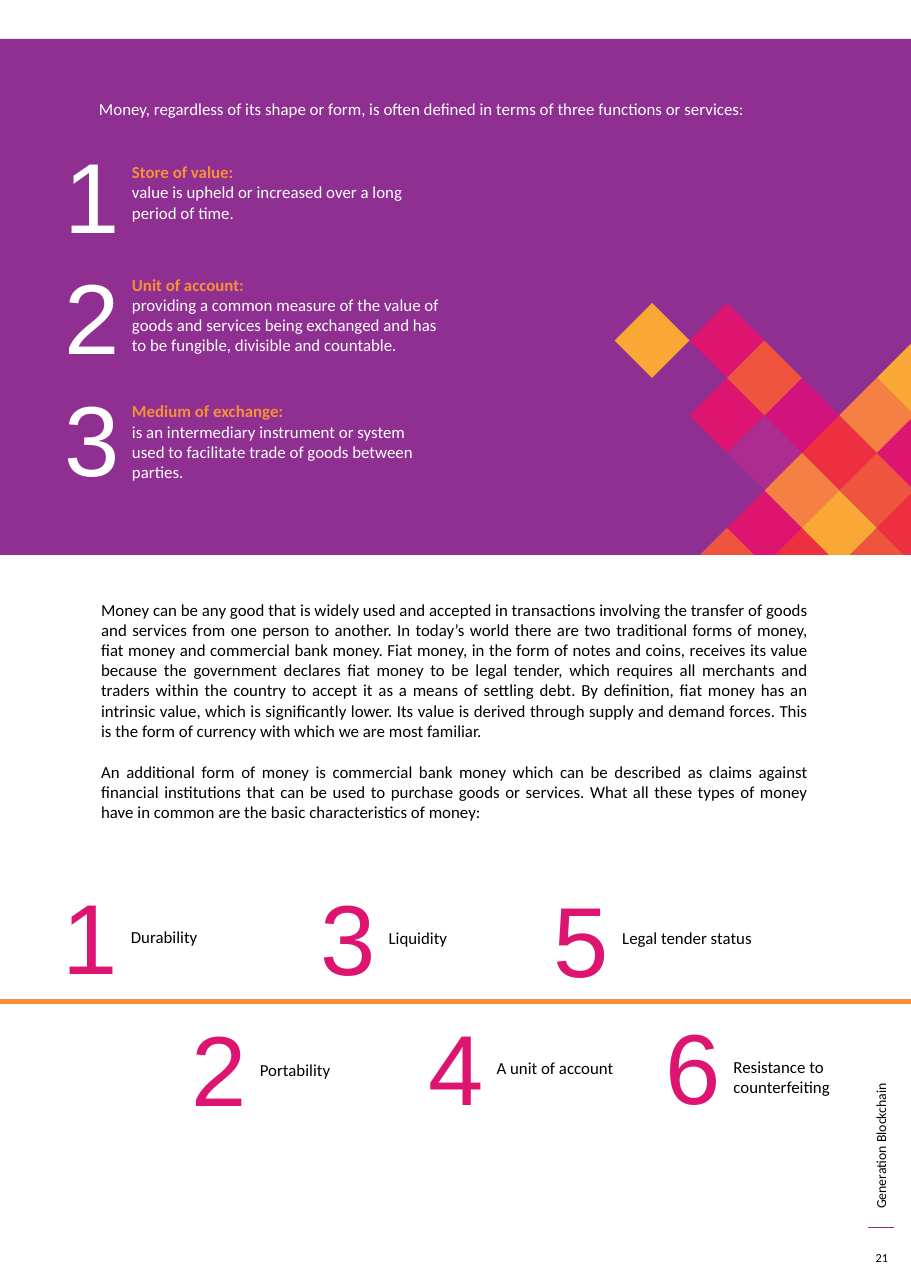
from lxml import etree
from pptx import Presentation
from pptx.dml.color import RGBColor
from pptx.enum.shapes import MSO_CONNECTOR, MSO_SHAPE
from pptx.enum.text import MSO_ANCHOR, PP_ALIGN
from pptx.oxml.ns import qn
from pptx.util import Pt

STRAIGHT = MSO_CONNECTOR.STRAIGHT
RECTANGLE = MSO_SHAPE.RECTANGLE
MIDDLE = MSO_ANCHOR.MIDDLE
LEFT, CENTER, JUSTIFY = PP_ALIGN.LEFT, PP_ALIGN.CENTER, PP_ALIGN.JUSTIFY

BLACK = RGBColor(0x00, 0x00, 0x00)
WHITE = RGBColor(0xFF, 0xFF, 0xFF)
PURPLE = RGBColor(0x8E, 0x2F, 0x91)
ORANGE = RGBColor(0xF7, 0x90, 0x37)
PINK = RGBColor(0xDD, 0x14, 0x70)
YELLOW = RGBColor(0xF9, 0xA8, 0x35)
APRICOT = RGBColor(0xF4, 0x80, 0x43)
CORAL = RGBColor(0xEF, 0x54, 0x3F)
RED = RGBColor(0xED, 0x2F, 0x40)
MAGENTA = RGBColor(0xD3, 0x13, 0x7D)
VIOLET = RGBColor(0xAC, 0x2C, 0x90)

PAGE_W, PAGE_H = 595.44, 841.68
PANEL_TOP, PANEL_BOTTOM = 25.4, 362.6

INTRO = ("Money, regardless of its shape or form, is often defined in terms of "
         "three functions or services:")
BODY = [
    "Money can be any good that is widely used and accepted in transactions "
    "involving the transfer of goods and services from one person to another. "
    "In today’s world there are two traditional forms of money, fiat money and "
    "commercial bank money. Fiat money, in the form of notes and coins, receives "
    "its value because the government declares fiat money to be legal tender, "
    "which requires all merchants and traders within the country to accept it as "
    "a means of settling debt. By definition, fiat money has an intrinsic value, "
    "which is significantly lower. Its value is derived through supply and demand "
    "forces. This is the form of currency with which we are most familiar.",
    "An additional form of money is commercial bank money which can be described "
    "as claims against financial institutions that can be used to purchase goods "
    "or services. What all these types of money have in common are the basic "
    "characteristics of money:",
]

# Label top, heading, explanation
FUNCTIONS = [
    (102.2, "Store of value:",
     "value is upheld or increased over a long period of time."),
    (175.7, "Unit of account:",
     "providing a common measure of the value of goods and services being "
     "exchanged and has to be fungible, divisible and countable."),
    (258.5, "Medium of exchange:",
     "is an intermediary instrument or system used to facilitate trade of goods "
     "between parties."),
]

# Digit left, digit top, label top, label width, label
CHARACTERISTICS = [
    (33.8, 568.1, 601.9, 82.8, "Durability"),
    (118.1, 654.5, 689, 82.8, "Portability"),
    (202.3, 568.8, 602.6, 82.8, "Liquidity"),
    (272.9, 653.8, 687.6, 103, "A unit of account"),
    (355, 570.2, 602.6, 118, "Legal tender status"),
    (427.7, 653, 686.9, 82.8, "Resistance to counterfeiting"),
]

# Column and row of each diamond's centre, in half diagonals
HALF = 24.48
FIRST_X, FIRST_Y = 426.24, 222.48
DIAMONDS = [
    (4, 6, RED), (3, 5, PINK), (2, 6, CORAL), (5, 5, YELLOW), (6, 4, CORAL),
    (5, 3, RED), (4, 4, APRICOT), (7, 3, PINK), (7, 1, YELLOW), (6, 2, APRICOT),
    (0, 0, YELLOW), (2, 0, PINK), (2, 2, PINK), (3, 3, VIOLET), (4, 2, MAGENTA),
    (3, 1, CORAL), (6, 6, CORAL), (7, 5, RED),
]


def add_text(s, box, lines, size=11, color=BLACK, font="Calibri", align=LEFT):
    sp = s.shapes.add_textbox(*map(Pt, box))
    tf = sp.text_frame
    tf.word_wrap = True
    tf.text = "\n".join(lines)
    for p in tf.paragraphs:
        p.alignment = align
        for r in p.runs:
            r.font.name = font
            r.font.size = Pt(size)
            r.font.color.rgb = color
    return sp


def add_digit(s, x, y, digit, color):
    add_text(s, (x, y, 51.8, 85.7), [str(digit)], 65, color, "Arial")


def add_line(s, x1, x2, y, color, width):
    line = s.shapes.add_connector(STRAIGHT, Pt(x1), Pt(y), Pt(x2), Pt(y))
    line.line.color.rgb = color
    line.line.width = Pt(width)
    etree.SubElement(line._element.spPr, qn("a:effectLst"))


def fill_plain(sp, color):
    sp.shadow.inherit = False
    sp.fill.solid()
    sp.fill.fore_color.rgb = color
    sp.line.fill.background()


def clip(points, axis, limit):
    """Cut off the part of a polygon that lies beyond limit on one axis."""
    kept = []
    for a, b in zip(points, points[1:] + points[:1]):
        if a[axis] <= limit:
            kept.append(a)
        if (a[axis] <= limit) != (b[axis] <= limit):
            t = (limit - a[axis]) / (b[axis] - a[axis])
            kept.append(tuple(m + t * (n - m) for m, n in zip(a, b)))
    return kept


def add_diamond(group, col, row, color):
    """Add one diamond of the pattern, cut at the page's and panel's edges."""
    x, y = FIRST_X + col * HALF, FIRST_Y + row * HALF
    corners = [(x, y - HALF), (x + HALF, y), (x, y + HALF), (x - HALF, y)]
    corners = clip(clip(corners, 0, PAGE_W), 1, PANEL_BOTTOM)
    points = [(Pt(px), Pt(py)) for px, py in corners]
    builder = group.shapes.build_freeform(*points[0])
    builder.add_line_segments(points[1:], close=True)
    fill_plain(builder.convert_to_shape(), color)


def add_function(s, number, label_top, heading, explanation):
    add_digit(s, 35.3, 84.2 + 79.2 * (number - 1), number, WHITE)
    sp = add_text(s, (79.2, label_top, 216, 49.7), [heading, explanation],
                  color=WHITE)
    r = sp.text_frame.paragraphs[0].runs[0]
    r.font.bold = True
    r.font.color.rgb = ORANGE


def add_characteristic(s, number, x, y, label_top, width, label):
    add_digit(s, x, y, number, PINK)
    add_text(s, (x + 44.6, label_top, width, 21), [label])


def add_footer(s):
    title = add_text(s, (450.7, 663.1, 249.8, 18), ["Generation Blockchain"], 9)
    title.rotation = 270
    add_line(s, 584.6, 567.4, 802.1, PURPLE, 0.75)
    number = add_text(s, (561.6, 803.5, 29.5, 36.7), ["21"], 8, align=CENTER)
    number.text_frame.vertical_anchor = MIDDLE


def main():
    prs = Presentation()
    prs.slide_width, prs.slide_height = Pt(PAGE_W), Pt(PAGE_H)
    s = prs.slides.add_slide(prs.slide_layouts[6])

    add_footer(s)
    panel = s.shapes.add_shape(RECTANGLE, 0, Pt(PANEL_TOP), Pt(PAGE_W),
                               Pt(PANEL_BOTTOM - PANEL_TOP))
    fill_plain(panel, PURPLE)
    add_text(s, (57.6, 61.2, 476.6, 22.3), [INTRO], color=WHITE, align=JUSTIFY)
    for number, function in enumerate(FUNCTIONS, 1):
        add_function(s, number, *function)
    group = s.shapes.add_group_shape()
    for diamond in DIAMONDS:
        add_diamond(group, *diamond)

    body = add_text(s, (59, 388.1, 476.6, 163.4), BODY, align=JUSTIFY)
    body.text_frame.paragraphs[1].space_before = Pt(13.4)
    add_line(s, 0, PAGE_W, 654.5, ORANGE, 3)
    for number, characteristic in enumerate(CHARACTERISTICS, 1):
        add_characteristic(s, number, *characteristic)

    prs.save("out.pptx")


if __name__ == "__main__":
    main()
